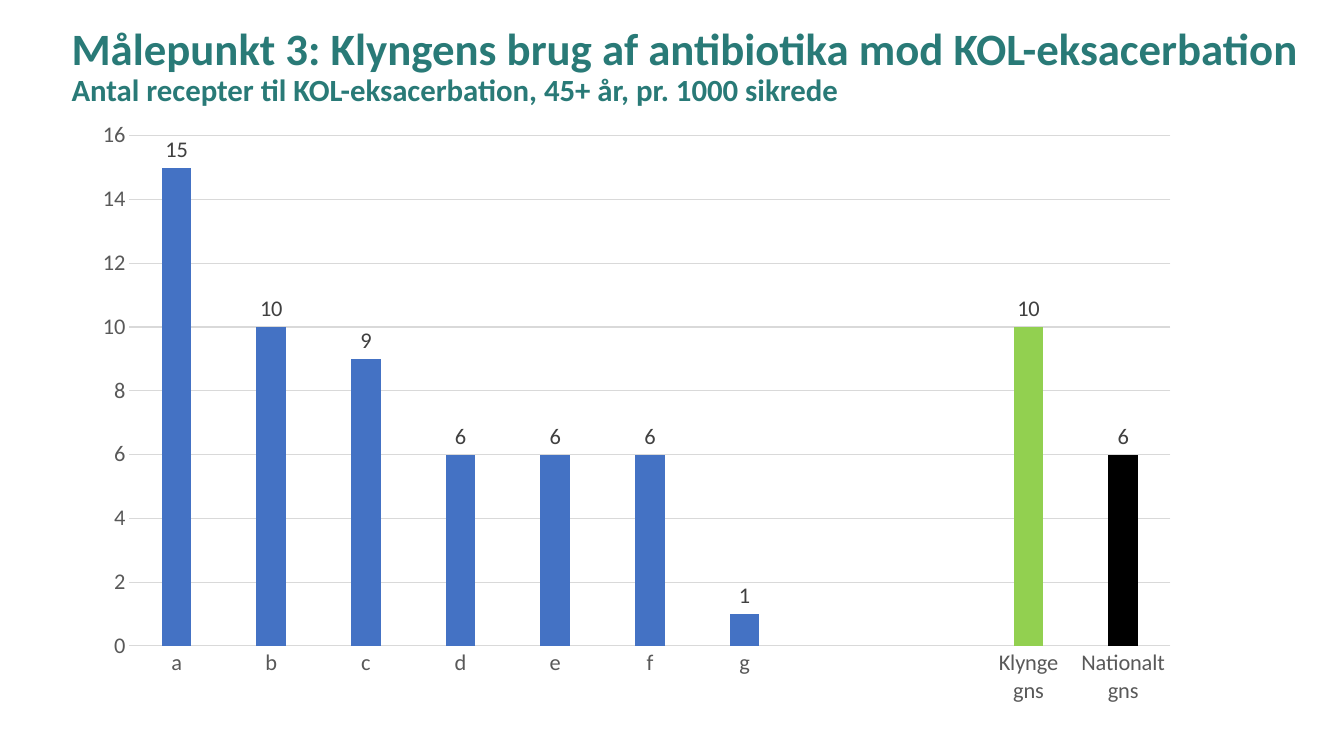
from pptx import Presentation
from pptx.chart.data import CategoryChartData
from pptx.dml.color import RGBColor
from pptx.enum.chart import XL_CHART_TYPE, XL_LABEL_POSITION, XL_TICK_MARK
from pptx.enum.text import MSO_ANCHOR, MSO_AUTO_SIZE, PP_ALIGN
from pptx.util import Inches, Pt

COLUMN = XL_CHART_TYPE.COLUMN_CLUSTERED
OUTSIDE = XL_LABEL_POSITION.OUTSIDE_END
NO_TICK = XL_TICK_MARK.NONE
MIDDLE = MSO_ANCHOR.MIDDLE
NO_FIT = MSO_AUTO_SIZE.NONE
LEFT = PP_ALIGN.LEFT

FONT = "Calibri"
COLORS = {
    "title": "297A77", "bar": "4472C4", "cluster": "92D050",
    "nation": "000000", "axis": "595959", "label": "404040", "grid": "D9D9D9",
}
TITLE = [
    ("Målepunkt 3: Klyngens brug af antibiotika mod KOL-eksacerbation", 32),
    ("Antal recepter til KOL-eksacerbation, 45+ år, pr. 1000 sikrede", 22),
]
BARS = [
    ("a", 15), ("b", 10), ("c", 9), ("d", 6), ("e", 6), ("f", 6), ("g", 1),
    ("", None), ("", None), ("Klynge gns", 10), ("Nationalt gns", 6),
]
POINTS = {9: "cluster", 10: "nation"}
TITLE_BOX = (0.61, 0.27, 12.54, 0.8)
CHART_BOX = (0.8, 1.09, 11.03, 6.02)


def color(name):
    return RGBColor.from_string(COLORS[name])


def style(item, values):
    for key, value in values.items():
        setattr(item, key, value)


def set_font(font, size, name, bold=False):
    style(font, {"name": FONT, "size": Pt(size), "bold": bold})
    font.color.rgb = color(name)


def set_line(line):
    line.color.rgb = color("grid")
    line.width = Pt(0.75)


def paint(form, name):
    form.fill.solid()
    form.fill.fore_color.rgb = color(name)


def add_title(slide):
    title = slide.shapes.title
    sides = ("left", "top", "width", "height")
    style(title, dict(zip(sides, map(Inches, TITLE_BOX))))
    frame = title.text_frame
    style(frame, {"word_wrap": True, "auto_size": NO_FIT,
                  "vertical_anchor": MIDDLE})
    para = frame.paragraphs[0]
    style(para, {"alignment": LEFT, "line_spacing": 0.9})
    for row, (text, size) in enumerate(TITLE):
        if row:
            para.add_line_break()
        run = para.add_run()
        run.text = text
        set_font(run.font, size, "title", True)


def add_bars(slide):
    data = CategoryChartData()
    data.categories = [name for name, _ in BARS]
    data.add_series("Series 1", [value for _, value in BARS])
    chart = slide.shapes.add_chart(
        COLUMN, *map(Inches, CHART_BOX), data).chart
    style(chart, {"has_legend": False, "has_title": False})
    set_font(chart.font, 16, "axis")

    plot = chart.plots[0]
    style(plot, {"gap_width": 219, "overlap": -27,
                 "vary_by_categories": False, "has_data_labels": True})
    style(plot.data_labels, {"show_value": True, "position": OUTSIDE})
    set_font(plot.data_labels.font, 16, "label")

    series = plot.series[0]
    paint(series.format, "bar")
    for index, name in POINTS.items():
        paint(series.points[index].format, name)

    for axis in (chart.category_axis, chart.value_axis):
        style(axis, {"major_tick_mark": NO_TICK, "minor_tick_mark": NO_TICK})
        set_font(axis.tick_labels.font, 16, "axis")
    set_line(chart.category_axis.format.line)
    scale = chart.value_axis
    style(scale, {"minimum_scale": 0, "maximum_scale": 16, "major_unit": 2,
                  "has_major_gridlines": True})
    scale.format.line.fill.background()
    set_line(scale.major_gridlines.format.line)


def main():
    deck = Presentation()
    style(deck, {"slide_width": Inches(13.33), "slide_height": Inches(7.5)})
    slide = deck.slides.add_slide(deck.slide_layouts[5])
    add_title(slide)
    add_bars(slide)
    deck.save("out.pptx")


if __name__ == "__main__":
    main()
